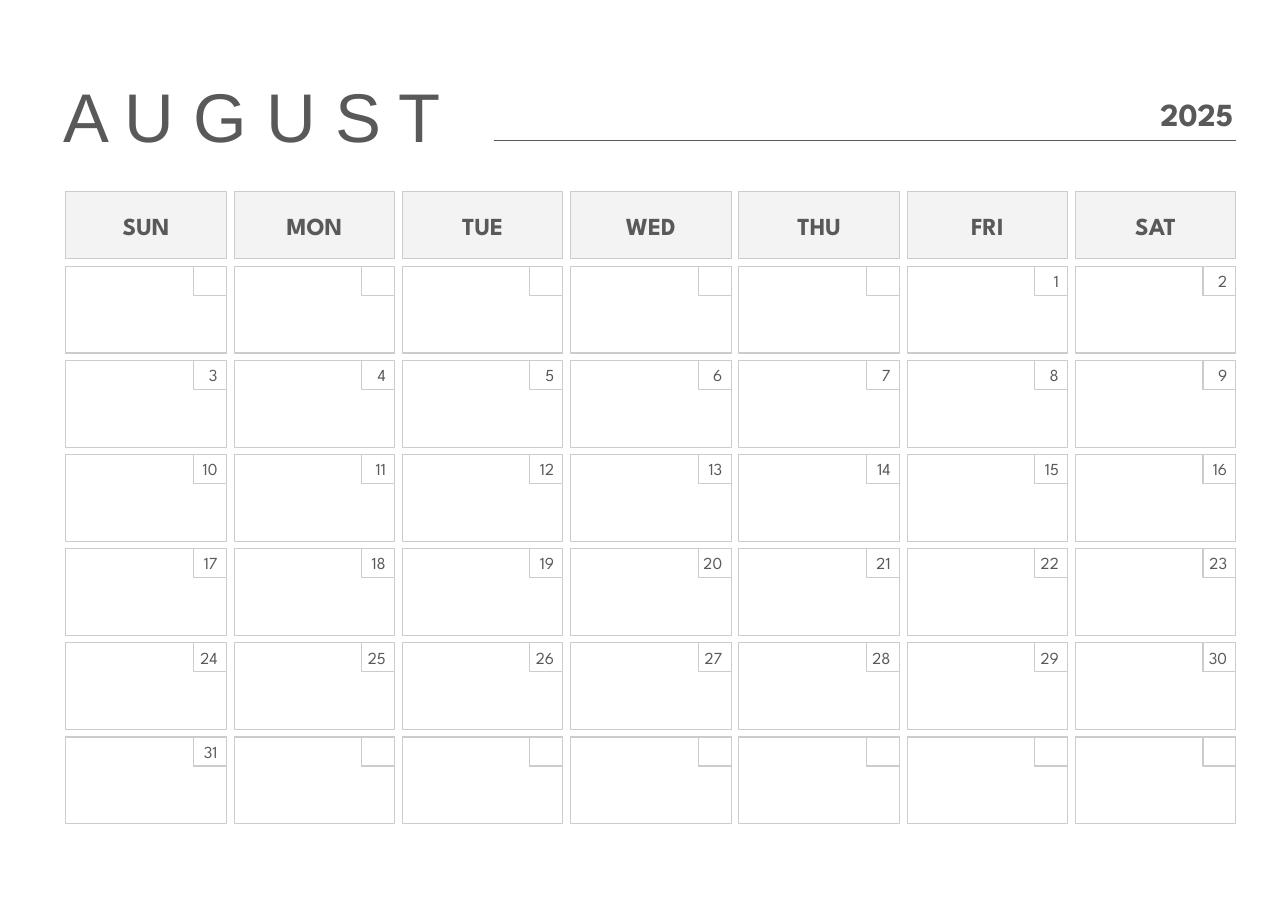
from lxml.etree import SubElement
from pptx import Presentation
from pptx.dml.color import RGBColor
from pptx.enum.shapes import MSO_CONNECTOR, MSO_SHAPE
from pptx.enum.text import MSO_ANCHOR, MSO_AUTO_SIZE, PP_ALIGN
from pptx.oxml.ns import qn
from pptx.util import Cm, Pt

DARK_GRAY = RGBColor(0x59, 0x59, 0x59)
LINE_GRAY = RGBColor(0xCC, 0xCC, 0xCC)
HEADER_GRAY = RGBColor(0xF3, 0xF3, 0xF3)
WHITE = RGBColor(0xFF, 0xFF, 0xFF)

TITLE_FONT = "Arial"
CALENDAR_FONT = "League Spartan"

WEEKDAYS = ["SUN", "MON", "TUE", "WED", "THU", "FRI", "SAT"]
WEEKS = 6
FIRST_WEEKDAY = 5  # the month starts on a Friday
DAYS_IN_MONTH = 31


def set_text(shape, text, font_name, size, alignment, bold=False,
             anchor=MSO_ANCHOR.MIDDLE, margins=(0, 0, 0, 0)):
    """Write one formatted line; margins are left, top, right, bottom in cm."""
    text_frame = shape.text_frame
    text_frame.text = text
    text_frame.word_wrap = True
    text_frame.auto_size = MSO_AUTO_SIZE.NONE
    text_frame.vertical_anchor = anchor
    (text_frame.margin_left, text_frame.margin_top,
     text_frame.margin_right, text_frame.margin_bottom) = map(Cm, margins)
    paragraph = text_frame.paragraphs[0]
    paragraph.alignment = alignment
    font = paragraph.runs[0].font
    font.name = font_name
    font.size = Pt(size)
    font.bold = bold
    font.color.rgb = DARK_GRAY


def add_box(shapes, left, top, width, height, fill=None, line=LINE_GRAY,
            kind=MSO_SHAPE.RECTANGLE):
    shape = shapes.add_shape(kind, Cm(left), Cm(top), Cm(width), Cm(height))
    shape.shadow.inherit = False
    if fill is None:
        shape.fill.background()
    else:
        shape.fill.solid()
        shape.fill.fore_color.rgb = fill
    if line is None:
        shape.line.fill.background()
    else:
        shape.line.color.rgb = line
        shape.line.width = Pt(0.75)
    return shape


def add_heading(slide, left, top, width, height, month, year):
    # Month name
    title = slide.shapes.title
    title.left, title.top = Cm(left), Cm(top)
    title.width, title.height = Cm(9.75), Cm(height)
    set_text(title, month, TITLE_FONT, 45, PP_ALIGN.LEFT,
             anchor=MSO_ANCHOR.BOTTOM)

    # Year above the right end of the rule
    right = left + width
    rule_y = top + 1.55
    year_box = add_box(slide.shapes, right - 3.1, rule_y - 1.22, 3.1, 1.22,
                       line=None, kind=MSO_SHAPE.ROUNDED_RECTANGLE)
    set_text(year_box, year, CALENDAR_FONT, 21, PP_ALIGN.RIGHT, bold=True)

    # Horizontal rule
    rule = slide.shapes.add_connector(
        MSO_CONNECTOR.STRAIGHT,
        Cm(left + 9.91), Cm(rule_y), Cm(right), Cm(rule_y))
    rule.line.color.rgb = DARK_GRAY
    rule.line.width = Pt(0.75)
    SubElement(rule._element.spPr, qn("a:effectLst"))


def add_calendar(slide, left, top, width, height):
    column_gap, row_gap = 0.18, 0.17
    header_height = 1.55
    tag_width, tag_height = 0.76, 0.67
    columns = len(WEEKDAYS)
    cell_width = (width - (columns - 1) * column_gap) / columns
    cell_height = (height - header_height - WEEKS * row_gap) / WEEKS
    first_row = top + header_height + row_gap
    column_lefts = [left + column * (cell_width + column_gap)
                    for column in range(columns)]
    row_tops = [first_row + week * (cell_height + row_gap)
                for week in range(WEEKS)]

    # Weekday headers
    cells = slide.shapes.add_group_shape().shapes
    for weekday, cell_left in zip(WEEKDAYS, column_lefts):
        header = add_box(cells, cell_left, top, cell_width, header_height,
                         HEADER_GRAY)
        set_text(header, weekday, CALENDAR_FONT, 16, PP_ALIGN.CENTER,
                 bold=True, margins=(0.25, 0.25, 0.25, 0.25))

    # Day cells with a number tag in the upper right corner
    tags = slide.shapes.add_group_shape().shapes
    for week, cell_top in enumerate(row_tops):
        for column, cell_left in enumerate(column_lefts):
            add_box(cells, cell_left, cell_top, cell_width, cell_height, WHITE)
            tag = add_box(tags, cell_left + cell_width - tag_width, cell_top,
                          tag_width, tag_height)
            day = week * columns + column - FIRST_WEEKDAY + 1
            if 1 <= day <= DAYS_IN_MONTH:
                set_text(tag, str(day), CALENDAR_FONT, 11, PP_ALIGN.RIGHT,
                         margins=(0, 0.1, 0.2, 0.1))


def main():
    presentation = Presentation()
    presentation.slide_width = Cm(29.7)
    presentation.slide_height = Cm(21)
    slide = presentation.slides.add_slide(presentation.slide_layouts[5])
    add_heading(slide, 1.47, 1.68, 27.03, 1.93, "A U G U S T", "2025")
    add_calendar(slide, 1.52, 4.42, 26.98, 14.57)
    presentation.save("out.pptx")


if __name__ == "__main__":
    main()
